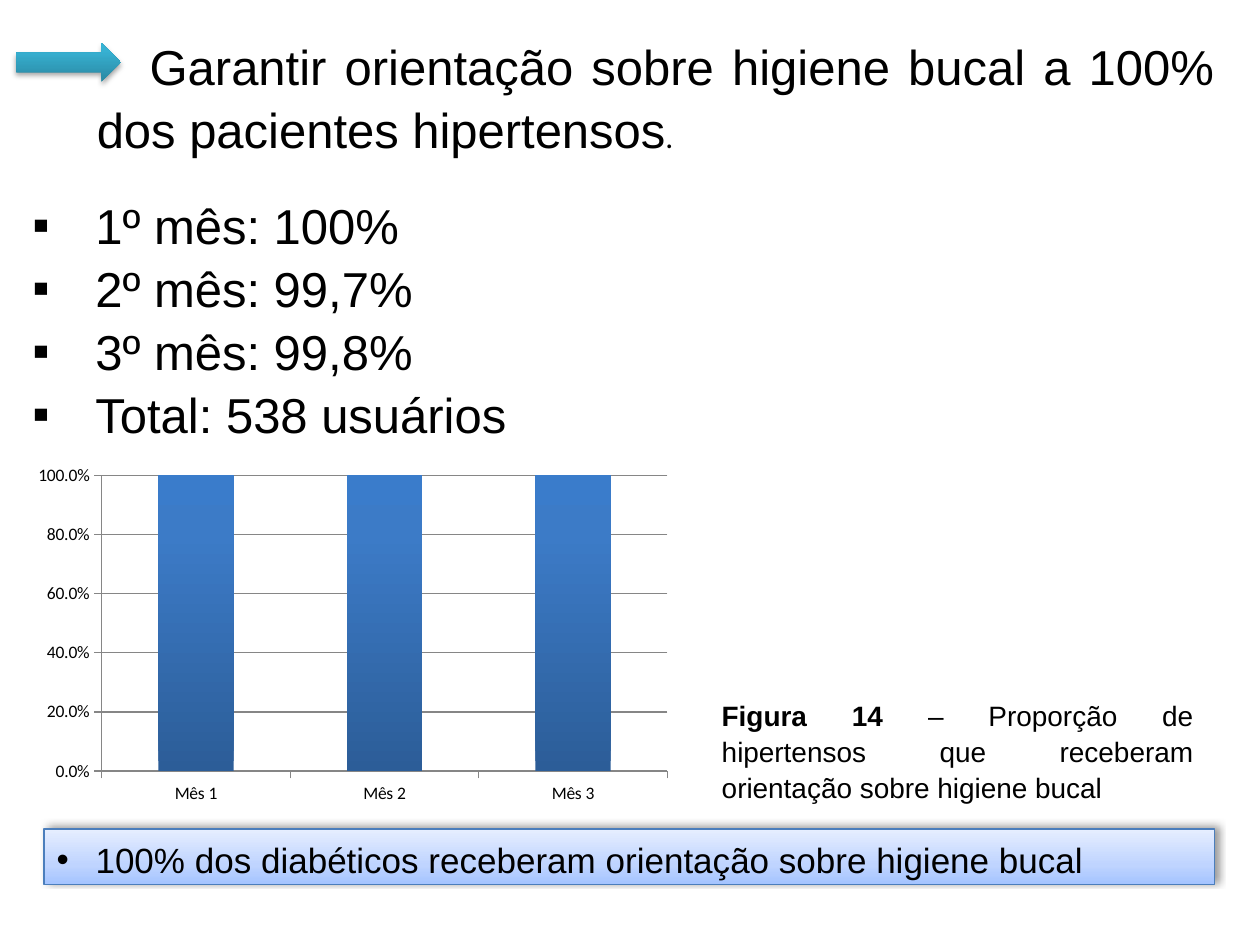
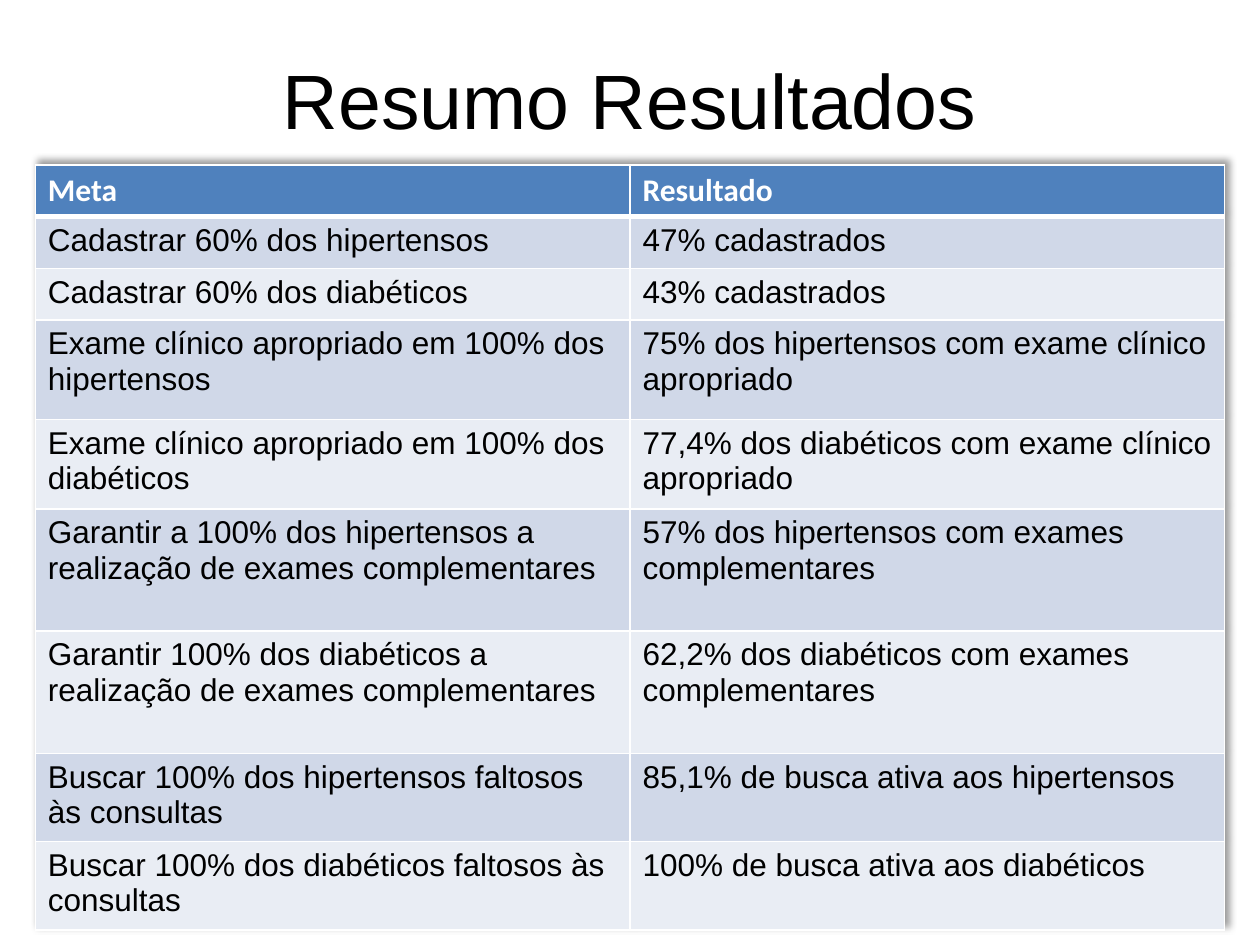
from dataclasses import dataclass

from lxml import etree
from pptx import Presentation
from pptx import util as u
from pptx.chart.data import CategoryChartData
from pptx.dml.color import RGBColor
from pptx.enum import chart as charts, shapes, text
from pptx.oxml.ns import qn


@dataclass(frozen=True)
class Theme:
    body_font: str = "Arial"
    label_font: str = "Calibri"
    ink: str = "000000"
    white: str = "FFFFFF"
    header: str = "4F81BD"
    bands: tuple = ("D0D8E8", "E9EDF4")
    banner_line: str = "4B7EBC"
    grid: str = "868686"
    banner_fill: tuple = ((0, "A4C4FF"), (35, "BFD4FF"), (100, "E6EEFF"))
    arrow_fill: tuple = ((0, "2A88A2"), (80, "37B1D2"), (100, "34B4D6"))
    bar_fill: tuple = ((0, "2C5D98"), (80, "3C7BC7"), (100, "3A7CCB"))
    # opacity %, blur pt, distance pt, direction in degrees
    raised: tuple = (40, 4, 3, 315)
    dropped: tuple = (35, 3.1, 1.8, 90)
    title: int = 44
    lead: int = 28
    banner: int = 20
    cell: int = 18
    caption: int = 16
    axis: int = 10
    leading: float = 1.07


THEME = Theme()
SCALE = 9144  # EMU in one px, 100 px to the inch

MONTHS = ("Mês 1", "Mês 2", "Mês 3")
MONTHLY_RESULTS = ("1º mês: 100%", "2º mês: 99,7%", "3º mês: 99,8%", "Total: 538 usuários")
SUMMARY = (
    ("Meta", "Resultado"),
    ("Cadastrar 60% dos hipertensos", "47% cadastrados"),
    ("Cadastrar 60% dos diabéticos", "43% cadastrados"),
    ("Exame clínico apropriado em 100% dos hipertensos",
     "75% dos hipertensos com exame clínico apropriado"),
    ("Exame clínico apropriado em 100% dos diabéticos",
     "77,4% dos diabéticos com exame clínico apropriado"),
    ("Garantir a 100% dos hipertensos a realização de exames complementares",
     "57% dos hipertensos com exames complementares"),
    ("Garantir 100% dos diabéticos a realização de exames complementares",
     "62,2% dos diabéticos com exames complementares"),
    ("Buscar 100% dos hipertensos faltosos às consultas",
     "85,1% de busca ativa aos hipertensos"),
    ("Buscar 100% dos diabéticos faltosos às consultas",
     "100% de busca ativa aos diabéticos"),
)
ROW_HEIGHTS = (41, 41, 41, 79, 71, 97, 97, 68, 68)


def px(*lengths):
    return [u.Emu(length * SCALE) for length in lengths]


def rgb(colour):
    return RGBColor.from_string(colour)


# Drawing helpers
def node(parent, tag, **attributes):
    child = etree.SubElement(parent, qn(tag))
    for name, value in attributes.items():
        child.set(name, str(value))
    return child


def fill_gradient(part, owner, stops):
    """Fill a part from bottom to top with the given stops."""
    part.fill.solid()
    solid = owner.find(".//" + qn("a:solidFill"))
    gradient = etree.Element(qn("a:gradFill"), rotWithShape="1")
    stop_list = node(gradient, "a:gsLst")
    for position, colour in stops:
        stop = node(stop_list, "a:gs", pos=position * 1000)
        node(stop, "a:srgbClr", val=colour)
    node(gradient, "a:lin", ang=270 * 60000, scaled=0)
    solid.getparent().replace(solid, gradient)


def cast_shadow(effects, shadow):
    opacity, blur, distance, direction = shadow
    outer = node(effects, "a:outerShdw", blurRad=u.Pt(blur), dist=u.Pt(distance),
                 dir=direction * 60000, rotWithShape=0)
    colour = node(outer, "a:srgbClr", val=THEME.ink)
    node(colour, "a:alpha", val=opacity * 1000)


def add_panel(page, kind, box, stops, shadow, line=None):
    panel = page.shapes.add_shape(kind, *px(*box))
    fill_gradient(panel, panel._element, stops)
    if line:
        panel.line.color.rgb = rgb(line)
        panel.line.width = u.Pt(0.75)
    else:
        panel.line.fill.background()
    panel.shadow.inherit = False
    cast_shadow(panel._element.spPr.find(qn("a:effectLst")), shadow)
    return panel


def style_span(span, size, font=THEME.body_font, colour=THEME.ink, bold=False):
    span.font.size = u.Pt(size)
    span.font.name = font
    span.font.bold = bold
    span.font.color.rgb = rgb(colour)


def write(frame, lines, size, align=text.PP_ALIGN.LEFT, anchor=text.MSO_ANCHOR.TOP):
    frame.word_wrap = True
    frame.vertical_anchor = anchor
    frame.text = "\n".join(lines)
    for para in frame.paragraphs:
        para.alignment = align
        para.line_spacing = THEME.leading
        for span in para.runs:
            style_span(span, size)
    return frame


def add_text(page, box, lines, size, **options):
    return write(page.shapes.add_textbox(*px(*box)).text_frame, lines, size, **options)


def add_bullets(frame, mark, indent):
    for para in frame.paragraphs:
        properties = para._p.get_or_add_pPr()
        properties.set("marL", str(indent * SCALE))
        properties.set("indent", str(-indent * SCALE))
        node(properties, "a:buFont", typeface=THEME.body_font)
        node(properties, "a:buChar", char=mark)


# Regions of the result page
def add_goal(page, box):
    left, top, width, height = box
    frame = add_text(page, (left + 54, top, width - 54, height),
                     ["Garantir orientação sobre higiene bucal a 100% dos pacientes hipertensos"],
                     THEME.lead, align=text.PP_ALIGN.JUSTIFY)
    para = frame.paragraphs[0]
    para._p.get_or_add_pPr().set("indent", str(42 * SCALE))
    stop = para.add_run()
    stop.text = "."
    style_span(stop, THEME.cell, THEME.label_font)
    add_panel(page, shapes.MSO_SHAPE.RIGHT_ARROW, (left, top + 13, 83, 31),
              THEME.arrow_fill, THEME.dropped)


def add_caption(page, box):
    frame = add_text(page, box, ["Figura 14 "], THEME.caption, align=text.PP_ALIGN.JUSTIFY)
    para = frame.paragraphs[0]
    para.runs[0].font.bold = True
    span = para.add_run()
    span.text = "– Proporção de hipertensos que receberam orientação sobre higiene bucal"
    style_span(span, THEME.caption)


def add_month_chart(page, box):
    data = CategoryChartData(number_format="0.0%")
    data.categories = MONTHS
    data.add_series("Series 1", (1, 1, 1))
    chart = page.shapes.add_chart(charts.XL_CHART_TYPE.COLUMN_CLUSTERED, *px(*box), data).chart
    chart.has_legend = False
    chart.has_title = False
    chart.font.size = u.Pt(THEME.axis)
    chart.font.name = THEME.label_font
    chart.font.color.rgb = rgb(THEME.ink)

    plot = chart.plots[0]
    plot.gap_width = 150
    plot.vary_by_categories = False
    bars = plot.series[0]
    fill_gradient(bars.format, bars._element, THEME.bar_fill)

    scale = chart.value_axis
    scale.minimum_scale, scale.maximum_scale, scale.major_unit = 0, 1, 0.2
    scale.has_major_gridlines = True
    scale.tick_labels.number_format = "0.0%"
    scale.tick_labels.number_format_is_linked = False
    for axis in (chart.category_axis, scale):
        axis.major_tick_mark = charts.XL_TICK_MARK.OUTSIDE
    for lined in (chart.category_axis, scale, scale.major_gridlines):
        lined.format.line.color.rgb = rgb(THEME.grid)
        lined.format.line.width = u.Pt(0.75)


def add_banner(page, box):
    banner = add_panel(page, shapes.MSO_SHAPE.RECTANGLE, box, THEME.banner_fill,
                       THEME.raised, THEME.banner_line)
    frame = write(banner.text_frame,
                  ["100% dos diabéticos receberam orientação sobre higiene bucal"], THEME.banner)
    add_bullets(frame, "•", 31)


# Summary table
def frame_cell(cell, top, bottom):
    properties = cell._tc.get_or_add_tcPr()
    sides = (("a:lnL", 1), ("a:lnR", 1), ("a:lnT", top), ("a:lnB", bottom))
    for place, (side, width) in enumerate(sides):
        border = etree.Element(qn(side), w=str(u.Pt(width)))
        node(node(border, "a:solidFill"), "a:srgbClr", val=THEME.white)
        properties.insert(place, border)


def add_summary(page, box):
    left, top, width, height = box
    table = page.shapes.add_table(len(SUMMARY), 2, *px(left, top, width, height)).table
    for column in table.columns:
        column.width = px(width // 2)[0]
    for index, (row, entries) in enumerate(zip(table.rows, SUMMARY)):
        row.height = px(ROW_HEIGHTS[index])[0]
        heading = index == 0
        for cell, entry in zip(row.cells, entries):
            cell.text = entry
            span = cell.text_frame.paragraphs[0].runs[0]
            if heading:
                style_span(span, THEME.cell, THEME.label_font, THEME.white, bold=True)
            else:
                style_span(span, THEME.cell)
            cell.fill.solid()
            cell.fill.fore_color.rgb = rgb(THEME.header if heading else THEME.bands[(index - 1) % 2])
            frame_cell(cell, top=3 if index == 1 else 1, bottom=3 if heading else 1)
    effects = etree.Element(qn("a:effectLst"))
    cast_shadow(effects, THEME.raised)
    table._tbl.tblPr.insert(0, effects)


# Pages
def build_result_page(page):
    add_banner(page, (35, 658, 929, 44))
    add_goal(page, (13, 21, 960, 135))
    add_month_chart(page, (20, 364, 520, 279))
    results = add_text(page, (16, 147, 547, 199), MONTHLY_RESULTS, THEME.lead)
    add_bullets(results, "▪", 50)
    add_caption(page, (563, 548, 394, 121))


def build_summary_page(page):
    add_text(page, (50, 13, 900, 125), ["Resumo Resultados"], THEME.title,
             align=text.PP_ALIGN.CENTER, anchor=text.MSO_ANCHOR.MIDDLE)
    add_summary(page, (28, 131, 944, sum(ROW_HEIGHTS)))


def main():
    deck = Presentation()
    deck.slide_width, deck.slide_height = px(1000, 750)
    for build in (build_result_page, build_summary_page):
        build(deck.slides.add_slide(deck.slide_layouts[6]))
    deck.save("out.pptx")


if __name__ == "__main__":
    main()
